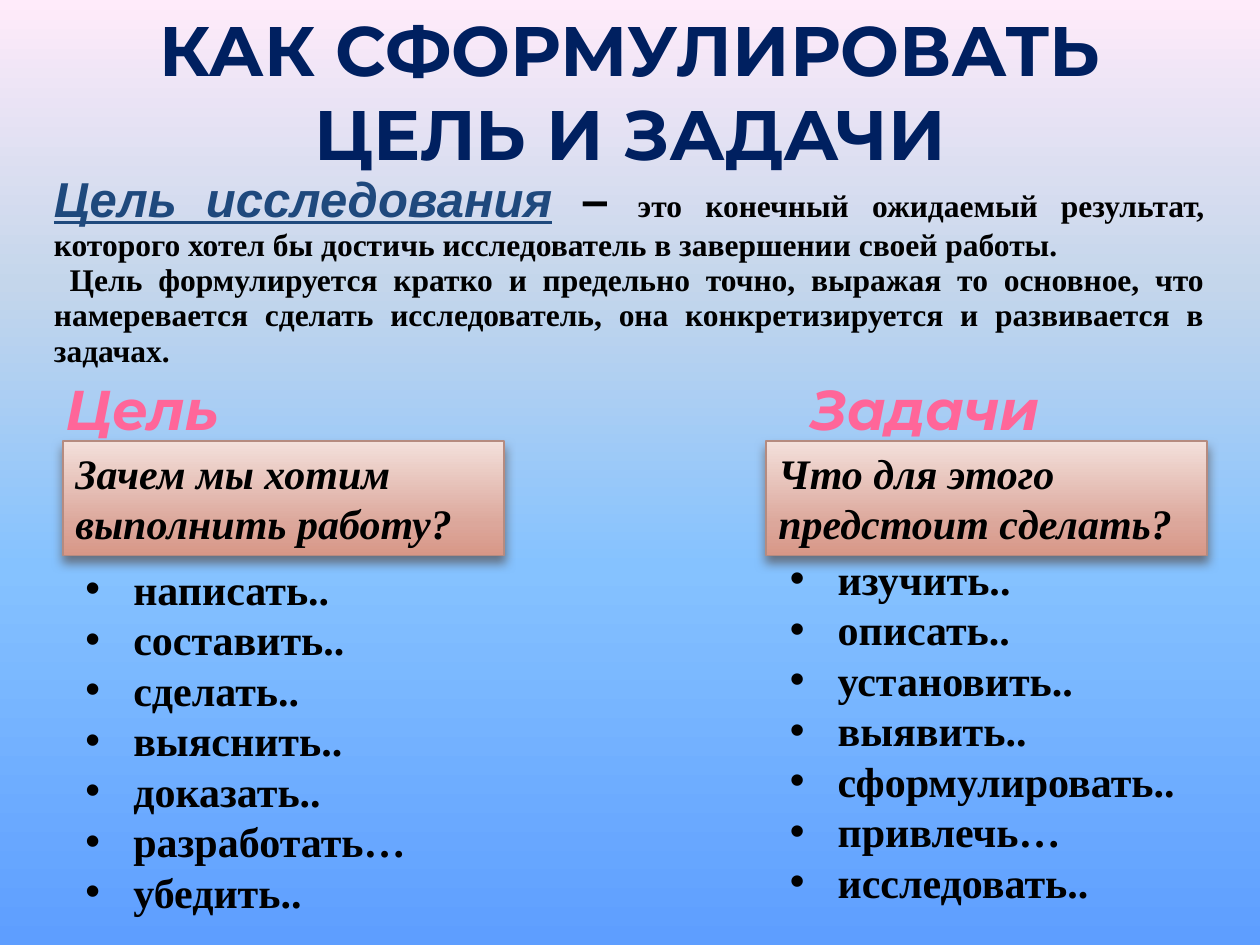
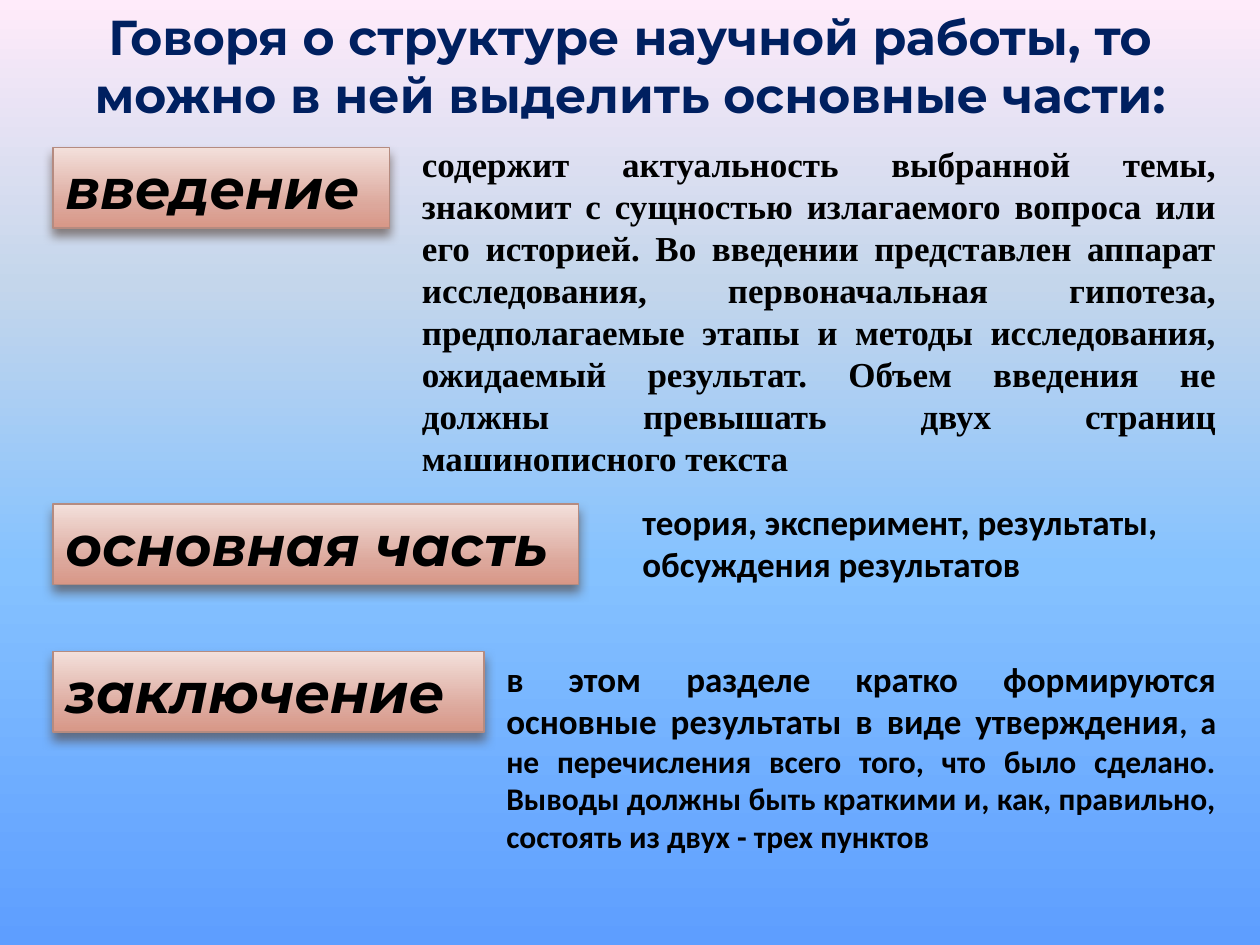
from lxml.etree import SubElement
from pptx import Presentation
from pptx.dml.color import RGBColor
from pptx.enum.shapes import MSO_SHAPE
from pptx.enum.text import MSO_ANCHOR, MSO_AUTO_SIZE, PP_ALIGN
from pptx.oxml.ns import qn
from pptx.util import Inches, Pt

COLORS = {
    "title": "002060",
    "term": "1F497D",
    "heading": "FF6699",
    "text": "000000",
    "box_line": "B58B80",
    "box_shadow": "4E3B30",
}
SKY = [(0, "5E9EFF"), (40, "85C2FF"), (70, "C4D6EB"), (100, "FFEBFA")]
CLAY = [(0, "F3E0DB"), (72, "DCA79B"), (100, "D89787")]
DISPLAY, SERIF, SANS = "Montserrat", "Times New Roman", "Calibri"


def add_color(parent, color, alpha=None):
    clr = SubElement(parent, qn("a:srgbClr"), val=color)
    if alpha is not None:
        SubElement(clr, qn("a:alpha"), val=str(alpha * 1000))


def set_gradient(fill, element, stops, angle):
    """Fill with any number of stops; angle runs clockwise from left to right."""
    fill.gradient()
    grad = element.find(".//" + qn("a:gradFill"))
    grad.clear()
    gs_list = SubElement(grad, qn("a:gsLst"))
    for pos, color in stops:
        add_color(SubElement(gs_list, qn("a:gs"), pos=str(pos * 1000)), color)
    SubElement(grad, qn("a:lin"), ang=str(angle * 60000), scaled="0")


def add_run(p, text, size=20, font=SERIF, color="text", italic=False,
            underline=False, outline=False):
    r = p.add_run()
    r.text = text
    f = r.font
    f.size, f.name, f.bold, f.italic, f.underline = Pt(size), font, True, italic, underline
    f.color.rgb = RGBColor.from_string(COLORS[color])
    if outline:
        rpr = r._r.get_or_add_rPr()
        ln = SubElement(rpr, qn("a:ln"), w=str(Pt(0.75)))
        add_color(SubElement(ln, qn("a:solidFill")), COLORS["text"])
        rpr.insert(0, ln)


class Deck:
    def __init__(self):
        self.prs = Presentation()
        self.prs.slide_width, self.prs.slide_height = Inches(10), Inches(7.5)
        master = self.prs.slide_master
        set_gradient(master.background.fill, master._element, SKY, 270)
        self.s = None

    def new_slide(self):
        self.s = self.prs.slides.add_slide(self.prs.slide_layouts[6])

    def set_text(self, sp, paragraphs, align=PP_ALIGN.LEFT, spacing=None,
                 bullets=False, wrap=True, grow=True, **style):
        """Each paragraph is a string or a list of (text, own style) runs."""
        tf = sp.text_frame
        tf.word_wrap = wrap
        tf.auto_size = MSO_AUTO_SIZE.SHAPE_TO_FIT_TEXT if grow else MSO_AUTO_SIZE.NONE
        tf.vertical_anchor = MSO_ANCHOR.TOP
        for i, runs in enumerate(paragraphs):
            p = tf.add_paragraph() if i else tf.paragraphs[0]
            p.alignment, p.line_spacing = align, spacing
            if bullets:
                p.space_before = Pt(5.8)
                ppr = p._p.get_or_add_pPr()
                ppr.set("marL", str(Inches(0.38)))
                ppr.set("indent", str(-Inches(0.38)))
                SubElement(ppr, qn("a:buFont"), typeface="Arial")
                SubElement(ppr, qn("a:buChar"), char="•")
            for text, own in [(runs, {})] if isinstance(runs, str) else runs:
                add_run(p, text, **{**style, **own})

    def text(self, x, y, w, h, *paragraphs, **fmt):
        sp = self.s.shapes.add_textbox(Inches(x), Inches(y), Inches(w), Inches(h))
        self.set_text(sp, paragraphs, **fmt)

    def title(self, x, w, h, text, size, grow=True):
        self.text(x, 0, w, h, text, size=size, font=DISPLAY, color="title",
                  align=PP_ALIGN.CENTER, grow=grow)

    def heading(self, x, w, text):
        self.text(x, 2.92, w, 0.64, text, size=32, font=DISPLAY, color="heading",
                  italic=True, outline=True, wrap=False)

    def bullets(self, x, y, w, items):
        self.text(x, y, w, 2.85, *items, size=24, spacing=0.8, bullets=True)

    def box(self, x, y, w, h, text, **style):
        sp = self.s.shapes.add_shape(MSO_SHAPE.RECTANGLE, Inches(x), Inches(y),
                                     Inches(w), Inches(h))
        set_gradient(sp.fill, sp._element.spPr, CLAY, 90)
        sp.line.color.rgb = RGBColor.from_string(COLORS["box_line"])
        sp.line.width = Pt(0.79)
        effects = SubElement(sp._element.spPr, qn("a:effectLst"))
        shadow = SubElement(effects, qn("a:outerShdw"), blurRad=str(Pt(6)),
                            dist=str(Pt(4)), dir=str(90 * 60000), rotWithShape="0")
        add_color(shadow, COLORS["box_shadow"], 60)
        self.set_text(sp, [text], italic=True, **style)


def goal_and_tasks(deck):
    deck.new_slide()
    deck.title(0.5, 9, 1.25, "КАК СФОРМУЛИРОВАТЬ ЦЕЛЬ И ЗАДАЧИ", 40, grow=False)
    deck.text(
        0.33, 1.33, 9.33, 1.67,
        [("Цель исследования", {"size": 28, "font": "Arial", "color": "term",
                                "italic": True, "underline": True}),
         (" – ", {"size": 28, "font": "Arial"}),
         ("это конечный ожидаемый результат, которого хотел бы достичь "
          "исследователь в завершении своей работы.", {})],
        " Цель формулируется кратко и предельно точно, выражая то основное, что "
        "намеревается сделать исследователь, она конкретизируется и развивается "
        "в задачах.",
        size=18, align=PP_ALIGN.JUSTIFY, spacing=0.93, grow=False)
    deck.heading(6.33, 2.02, "Задачи")
    deck.heading(0.42, 1.49, "Цель")
    questions = [(0.5, "Зачем мы хотим выполнить работу?"),
                 (6.08, "Что для этого предстоит сделать?")]
    for x, question in questions:
        deck.box(x, 3.5, 3.5, 0.91, question, size=24)
    deck.bullets(0.58, 4.5, 3, ["написать..", "составить..", "сделать..", "выяснить..",
                                "доказать..", "разработать…", "убедить.."])
    deck.bullets(6.17, 4.42, 3.9, ["изучить..", "описать..", "установить..", "выявить..",
                                   "сформулировать..", "привлечь…", "исследовать.."])


def work_structure(deck):
    deck.new_slide()
    deck.title(0, 10, 1.04, "Говоря о структуре научной работы, то можно в ней "
                            "выделить основные части:", 28)
    parts = [(1.17, 2.67, "введение"), (4, 4.17, "основная часть"),
             (5.17, 3.42, "заключение")]
    for y, w, part in parts:
        deck.box(0.42, y, w, 0.64, part, size=32, font=DISPLAY)
    deck.text(5, 3.92, 4.5, 0.77,
              "теория, эксперимент, результаты, обсуждения результатов", font=SANS)
    deck.text(
        3.92, 5.17, 5.83, 1.68,
        [("в этом разделе кратко формируются основные результаты в виде утверждения", {}),
         (", а не перечисления всего того, что было сделано. Выводы должны быть "
          "краткими и, как, правильно, состоять из двух - трех пунктов", {"size": 18})],
        font=SANS, align=PP_ALIGN.JUSTIFY)
    deck.text(
        3.25, 1.08, 6.5, 3.1,
        "содержит актуальность выбранной темы, знакомит с сущностью излагаемого "
        "вопроса или его историей. Во введении представлен аппарат исследования, "
        "первоначальная гипотеза, предполагаемые этапы и методы исследования, "
        "ожидаемый результат. Объем введения не должны превышать двух страниц "
        "машинописного текста", align=PP_ALIGN.JUSTIFY)


def main():
    deck = Deck()
    goal_and_tasks(deck)
    work_structure(deck)
    deck.prs.save("out.pptx")


if __name__ == "__main__":
    main()
